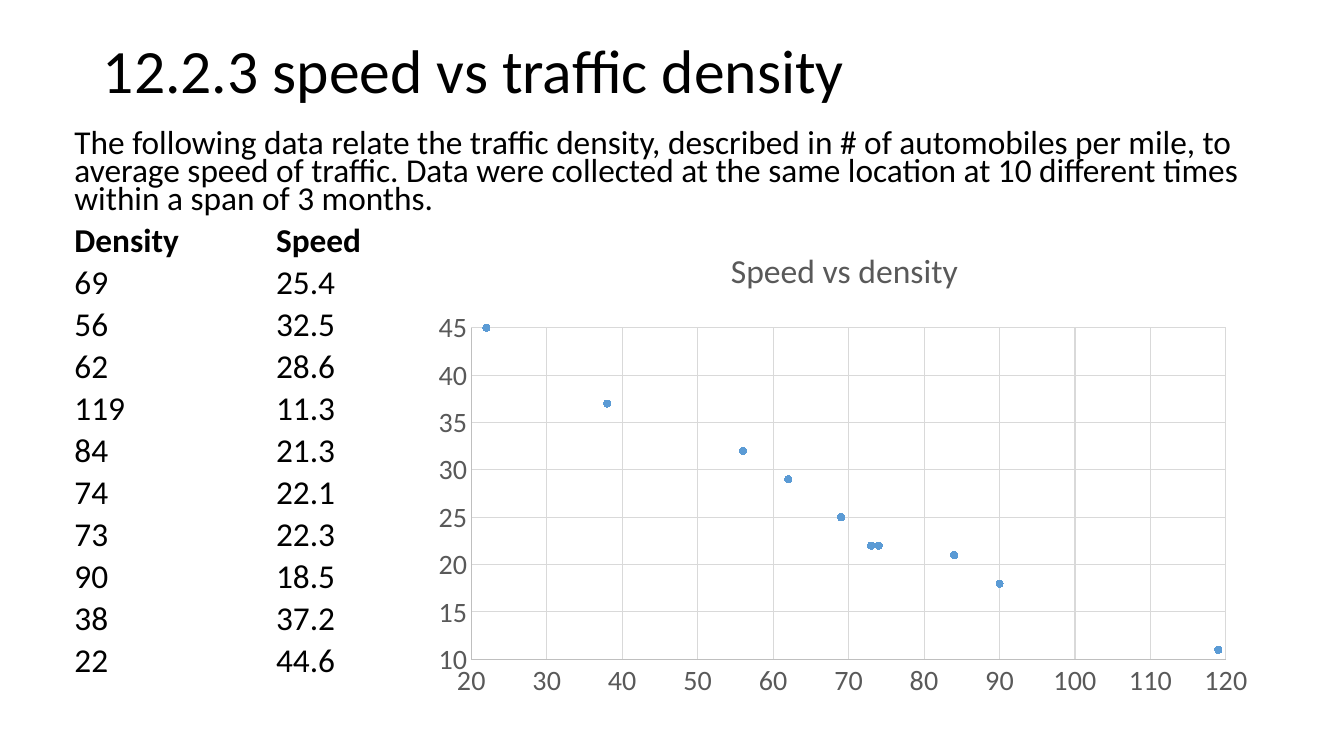
from lxml import etree
from pptx import Presentation
from pptx import util as u
from pptx.chart.data import XyChartData
from pptx.dml.color import RGBColor
from pptx.enum import chart as ch, text
from pptx.oxml.ns import qn

FONT = "Calibri"
BLACK = RGBColor(0x00, 0x00, 0x00)
GRAY = RGBColor(0x59, 0x59, 0x59)
AXIS = RGBColor(0xBF, 0xBF, 0xBF)
GRID = RGBColor(0xD9, 0xD9, 0xD9)
BLUE = RGBColor(0x5B, 0x9B, 0xD5)

INTRO = ("The following data relate the traffic density, described in # of automobiles "
         "per mile, to average speed of traffic. Data were collected at the same location "
         "at 10 different times within a span of 3 months.")
READINGS = [(69, 25.4), (56, 32.5), (62, 28.6), (119, 11.3), (84, 21.3),
            (74, 22.1), (73, 22.3), (90, 18.5), (38, 37.2), (22, 44.6)]


def set_font(font, size, color, bold=False):
    for name, value in {"name": FONT, "size": u.Pt(size), "bold": bold}.items():
        setattr(font, name, value)
    font.color.rgb = color


def set_line(line, color):
    line.color.rgb = color
    line.width = u.Pt(0.75)


def inches(box):
    return [u.Inches(value) for value in box]


def add_title(slide, box):
    title = slide.shapes.title
    title.left, title.top, title.width, title.height = inches(box)
    frame = title.text_frame
    frame.text = "12.2.3 speed vs traffic density"
    frame.auto_size = text.MSO_AUTO_SIZE.NONE
    frame.vertical_anchor = text.MSO_ANCHOR.MIDDLE
    paragraph = frame.paragraphs[0]
    paragraph.alignment = text.PP_ALIGN.LEFT
    paragraph.line_spacing = 0.9
    set_font(paragraph.runs[0].font, 44, BLACK)


def add_tab_stop(paragraph, position):
    tabs = etree.SubElement(paragraph._p.get_or_add_pPr(), qn("a:tabLst"))
    etree.SubElement(tabs, qn("a:tab"), pos=str(u.Inches(position)), algn="l")


def add_readings(slide, box):
    frame = slide.shapes.add_textbox(*inches(box)).text_frame
    frame.word_wrap = True
    heading = "Density\tSpeed"
    lines = [INTRO, heading] + [f"{density}\t{speed}" for density, speed in READINGS]
    for index, line in enumerate(lines):
        paragraph = frame.add_paragraph() if index else frame.paragraphs[0]
        paragraph.line_spacing = 0.7
        if index:
            paragraph.space_before = u.Pt(10)
            add_tab_stop(paragraph, 2)
        run = paragraph.add_run()
        run.text = line
        set_font(run.font, 23.8, BLACK, bold=line == heading)


def format_axis(axis, low, high, step):
    values = {"minimum_scale": low, "maximum_scale": high, "major_unit": step,
              "major_tick_mark": ch.XL_TICK_MARK.NONE,
              "minor_tick_mark": ch.XL_TICK_MARK.NONE,
              "has_major_gridlines": True}
    for name, value in values.items():
        setattr(axis, name, value)
    set_line(axis.format.line, AXIS)
    set_line(axis.major_gridlines.format.line, GRID)
    set_font(axis.tick_labels.font, 20, GRAY)
    axis.tick_labels.number_format = "General"
    axis.tick_labels.number_format_is_linked = False


def place_plot(chart, x, y, w, h):
    # Inner plot area, as fractions of the chart
    plot_area = chart._chartSpace.chart.plotArea
    for old in plot_area.findall(qn("c:layout")):
        plot_area.remove(old)
    layout = etree.Element(qn("c:layout"))
    plot_area.insert(0, layout)
    manual = etree.SubElement(layout, qn("c:manualLayout"))
    values = {"layoutTarget": "inner", "xMode": "edge", "yMode": "edge",
              "x": x, "y": y, "w": w, "h": h}
    for name, value in values.items():
        etree.SubElement(manual, qn(f"c:{name}"), val=str(value))


def add_scatter(slide, box):
    data = XyChartData()
    points = data.add_series("Series 1")
    for density, speed in READINGS:
        points.add_data_point(density, round(speed))
    chart = slide.shapes.add_chart(ch.XL_CHART_TYPE.XY_SCATTER, *inches(box), data).chart
    set_font(chart.font, 20, BLACK)
    chart.has_legend = False

    # Chart title
    chart.has_title = True
    frame = chart.chart_title.text_frame
    frame.text = "Speed vs density"
    set_font(frame.paragraphs[0].runs[0].font, 24, GRAY)
    chart.chart_title.include_in_layout = False

    # Axes and plot area
    format_axis(chart.category_axis, 20, 120, 10)
    format_axis(chart.value_axis, 10, 45, 5)
    place_plot(chart, 0.06, 0.21, 0.89, 0.69)

    # Markers only
    plot = chart.plots[0]
    plot.vary_by_categories = False
    series = plot.series[0]
    series.smooth = False
    series.format.line.fill.background()
    marker = series.marker
    marker.style = ch.XL_MARKER_STYLE.CIRCLE
    marker.size = 5
    marker.format.fill.solid()
    marker.format.fill.fore_color.rgb = BLUE
    marker.format.line.color.rgb = BLUE


def main():
    presentation = Presentation()
    presentation.slide_width = u.Inches(13.33)
    presentation.slide_height = u.Inches(7.5)
    slide = presentation.slides.add_slide(presentation.slide_layouts[5])
    add_title(slide, (0.92, 0, 11.5, 1.45))
    add_readings(slide, (0.64, 1.26, 11.78, 5.76))
    add_scatter(slide, (4.17, 2.25, 8.41, 4.77))
    presentation.save("out.pptx")


if __name__ == "__main__":
    main()
